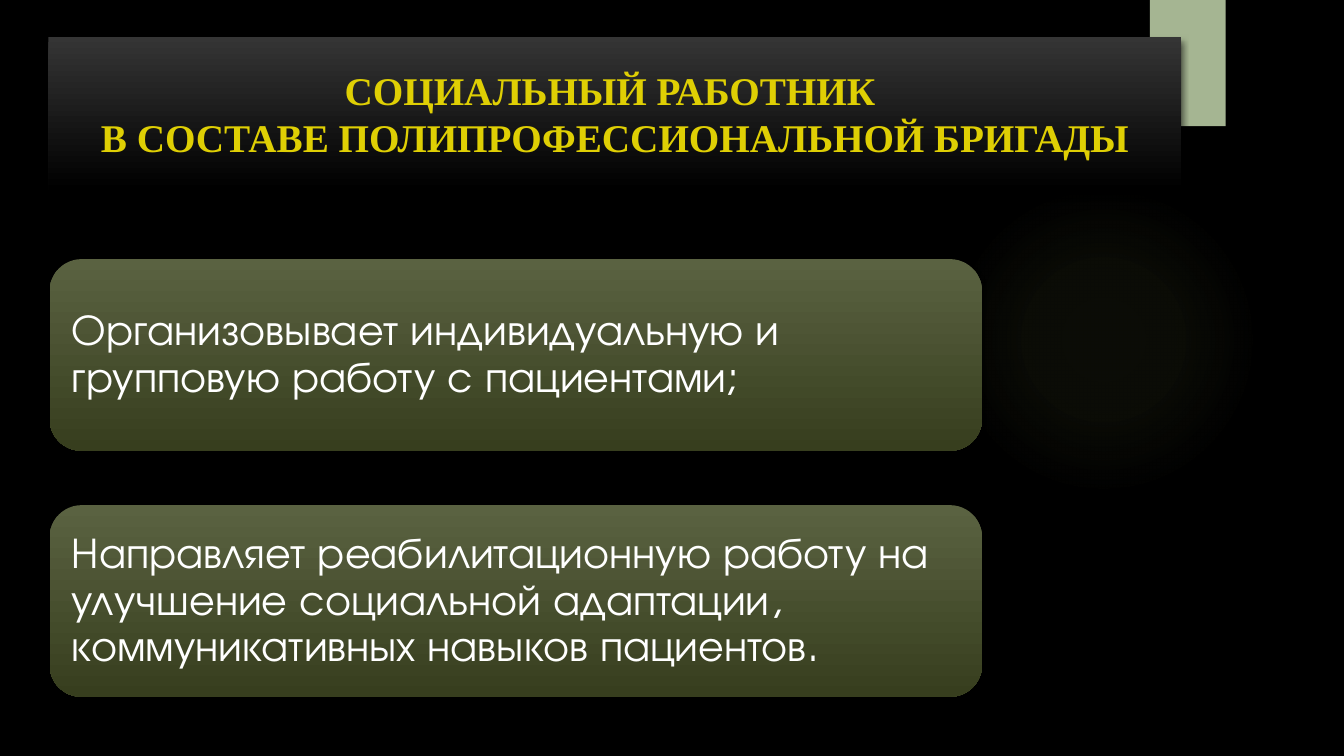
"""Build the slide on the social worker's role in a multidisciplinary team."""
from dataclasses import dataclass

from lxml import etree
from pptx import Presentation
from pptx.dml.color import RGBColor
from pptx.enum.shapes import MSO_SHAPE
from pptx.enum.text import MSO_ANCHOR, MSO_AUTO_SIZE, PP_ALIGN
from pptx.oxml.ns import qn
from pptx.util import Cm, Pt

RECT, ROUNDED, OVAL = MSO_SHAPE.RECTANGLE, MSO_SHAPE.ROUNDED_RECTANGLE, MSO_SHAPE.OVAL
MIDDLE, NO_FIT = MSO_ANCHOR.MIDDLE, MSO_AUTO_SIZE.NONE
LEFT, CENTER = PP_ALIGN.LEFT, PP_ALIGN.CENTER
BODY_FONT, TITLE_FONT = "TeX Gyre Adventor", "Times New Roman"
COLORS = {
    "background": "000000", "glow": "9EB160", "tab": "A5B592",
    "title_top": "353535", "title_bottom": "000000", "title": "DFCF04",
    "card_top": "5A6241", "card_bottom": "373E1E", "text": "FFFFFF",
}
TITLE_FORMAT = {"name": TITLE_FONT, "size": Pt(28), "bold": True}
CARD_FORMAT = {"name": BODY_FONT, "size": Pt(31), "bold": False}
GLOW_STOPS = ((0, 7), (36, 6), (69, 0))
CARD_TOP, CARD_STEP = 6.53, 6.2


@dataclass
class Box:
    """Position and size in centimetres."""
    left: float
    top: float
    width: float
    height: float

    def lengths(self) -> tuple:
        """Return the four lengths."""
        return Cm(self.left), Cm(self.top), Cm(self.width), Cm(self.height)


@dataclass
class Card:
    """A rounded card with its statement."""
    box: Box
    text: str


STATEMENTS = (
    "Организовывает индивидуальную и групповую работу с пациентами;",
    "Направляет реабилитационную работу на улучшение социальной адаптации, "
    "коммуникативных навыков пациентов.",
)
CARDS = [Card(Box(1.25, CARD_TOP + i * CARD_STEP, 23.5, 4.83), text)
         for i, text in enumerate(STATEMENTS)]


def rgb(name: str) -> RGBColor:
    """Look up a palette colour."""
    return RGBColor.from_string(COLORS[name])


def add_shape(s, kind, box: Box):
    """Add a shape without line or shadow."""
    sp = s.shapes.add_shape(kind, *box.lengths())
    sp.shadow.inherit = False
    sp.line.fill.background()
    return sp


def fill_down(sp, top: str, bottom: str) -> None:
    """Fill with a gradient from top to bottom."""
    sp.fill.gradient()
    sp.fill.gradient_angle = 270
    for stop, name in zip(sp.fill.gradient_stops, (top, bottom)):
        stop.color.rgb = rgb(name)


def fill_glow(sp) -> None:
    """Fill with a radial gradient that fades out."""
    sp.fill.gradient()
    grad = sp._element.spPr.find(qn("a:gradFill"))
    for child in list(grad):
        grad.remove(child)
    stops = etree.SubElement(grad, qn("a:gsLst"))
    for position, alpha in GLOW_STOPS:
        gs = etree.SubElement(stops, qn("a:gs"), pos=str(position * 1000))
        color = etree.SubElement(gs, qn("a:srgbClr"), val=COLORS["glow"])
        etree.SubElement(color, qn("a:alpha"), val=str(alpha * 1000))
    circle = etree.SubElement(grad, qn("a:path"), path="circle")
    etree.SubElement(circle, qn("a:fillToRect"), **dict.fromkeys("ltrb", "50000"))


def add_shadow(sp, alpha: int, blur: int, distance: int) -> None:
    """Cast a black shadow downwards."""
    sp.shadow.inherit = False
    effects = sp._element.spPr.find(qn("a:effectLst"))
    shadow = etree.SubElement(effects, qn("a:outerShdw"), blurRad=str(Pt(blur)),
                              dist=str(Pt(distance)), dir="5400000", rotWithShape="0")
    color = etree.SubElement(shadow, qn("a:srgbClr"), val=COLORS["background"])
    etree.SubElement(color, qn("a:alpha"), val=str(alpha * 1000))


def write(sp, text: str, style: dict, color: str, align):
    """Write one formatted paragraph, centred vertically."""
    tf = sp.text_frame
    tf.word_wrap, tf.auto_size, tf.vertical_anchor = True, NO_FIT, MIDDLE
    p = tf.paragraphs[0]
    p.text, p.alignment = text, align
    for r in p.runs:
        for key, value in style.items():
            setattr(r.font, key, value)
        r.font.color.rgb = rgb(color)
    return p


def add_title(s) -> None:
    """Format the title placeholder and bring it in front of the tab."""
    sp = s.shapes.title
    sp.left, sp.top, sp.width, sp.height = Box(1.22, 0.92, 28.55, 3.88).lengths()
    fill_down(sp, "title_top", "title_bottom")
    add_shadow(sp, 60, 5, 3)
    p = write(sp, "СОЦИАЛЬНЫЙ РАБОТНИК \vВ СОСТАВЕ ПОЛИПРОФЕССИОНАЛЬНОЙ БРИГАДЫ",
              TITLE_FORMAT, "title", CENTER)
    for br in p._p.findall(qn("a:br")):
        props = etree.SubElement(br, qn("a:rPr"), sz="2800")
        etree.SubElement(props, qn("a:latin"), typeface=BODY_FONT)
    s.shapes._spTree.append(sp._element)


def add_card(s, card: Card) -> None:
    """Draw a card with its statement."""
    sp = add_shape(s, ROUNDED, card.box)
    fill_down(sp, "card_top", "card_bottom")
    add_shadow(sp, 45, 3, 2)
    tf = sp.text_frame
    for side in ("left", "top", "right", "bottom"):
        setattr(tf, f"margin_{side}", Cm(0.33))
    p = write(sp, card.text, CARD_FORMAT, "text", LEFT)
    p.line_spacing = 0.9


def main() -> None:
    """Build and save the slide."""
    prs = Presentation()
    prs.slide_width, prs.slide_height = Cm(33.87), Cm(19.05)
    s = prs.slides.add_slide(prs.slide_layouts[5])
    s.background.fill.solid()
    s.background.fill.fore_color.rgb = rgb("background")
    fill_glow(add_shape(s, OVAL, Box(23.9, 4.65, 7.82, 7.82)))
    tab = add_shape(s, RECT, Box(28.98, 0, 1.91, 3.18))
    tab.fill.solid()
    tab.fill.fore_color.rgb = rgb("tab")
    add_shadow(tab, 45, 3, 2)
    add_title(s)
    for card in CARDS:
        add_card(s, card)
    prs.save("out.pptx")


if __name__ == "__main__":
    main()
